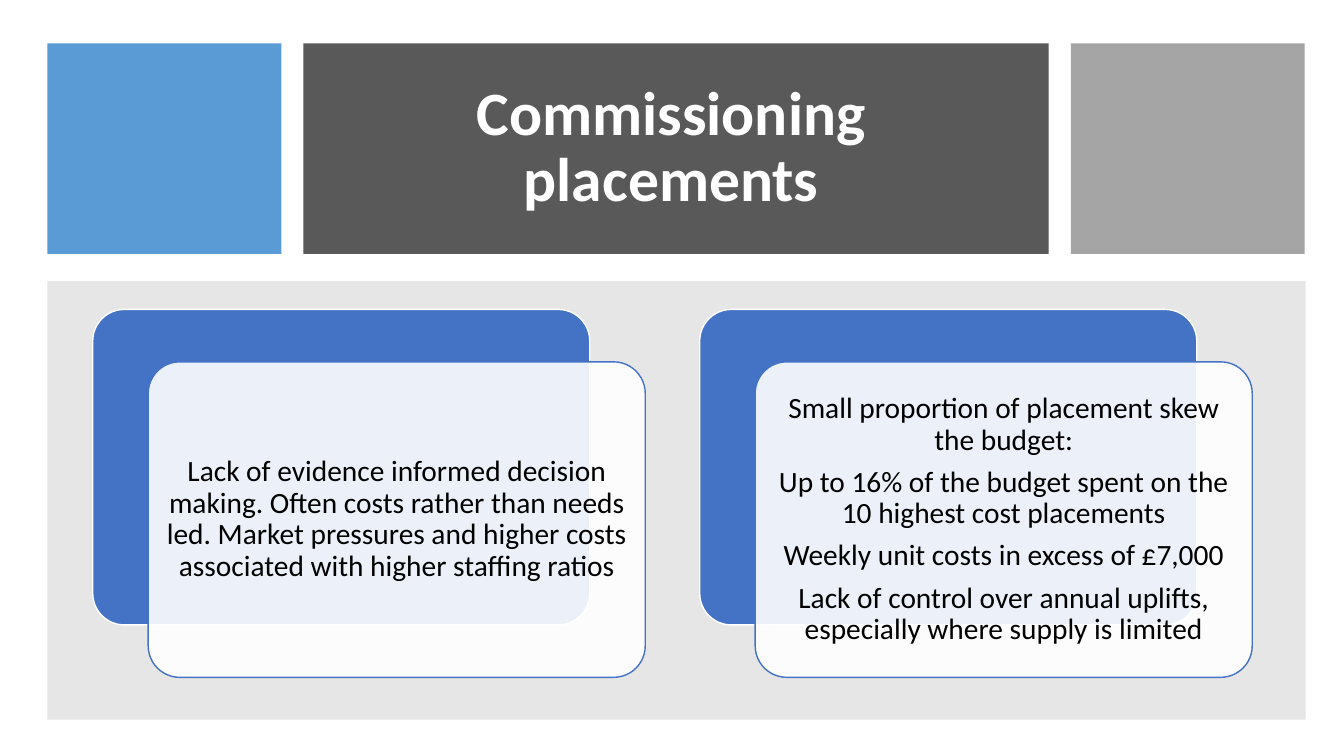
import pptx
import pptx.util
import pptx.dml.color
import pptx.enum.shapes
import pptx.enum.text
import pptx.oxml.ns
import lxml.etree

Inches = pptx.util.Inches
Pt = pptx.util.Pt
RGBColor = pptx.dml.color.RGBColor
MSO_SHAPE = pptx.enum.shapes.MSO_SHAPE

WHITE = RGBColor(0xFF, 0xFF, 0xFF)
BLACK = RGBColor(0x00, 0x00, 0x00)
CHARCOAL = RGBColor(0x59, 0x59, 0x59)
SKY = RGBColor(0x5B, 0x9B, 0xD5)
GREY = RGBColor(0xA5, 0xA5, 0xA5)
PALE_GREY = RGBColor(0xE7, 0xE6, 0xE6)
BLUE = RGBColor(0x44, 0x72, 0xC4)


def add_block(kind, left, top, width, height, fill, line=None):
    shape = slide.shapes.add_shape(
        kind, Inches(left), Inches(top), Inches(width), Inches(height))
    shape.shadow.inherit = False
    shape.fill.solid()
    shape.fill.fore_color.rgb = fill
    if line is None:
        shape.line.fill.background()
    else:
        shape.line.color.rgb = line
        shape.line.width = Pt(1)
        shape.adjustments[0] = 0.1
    return shape


def write_text(shape, lines, size, color, bold, space_after):
    frame = shape.text_frame
    frame.word_wrap = True
    frame.vertical_anchor = pptx.enum.text.MSO_ANCHOR.MIDDLE
    frame.text = "\n".join(lines)
    for paragraph in frame.paragraphs:
        paragraph.alignment = pptx.enum.text.PP_ALIGN.CENTER
        paragraph.line_spacing = 0.9
        paragraph.space_after = Pt(space_after)
        paragraph.font.name = "Calibri"
        paragraph.font.size = Pt(size)
        paragraph.font.bold = bold
        paragraph.font.color.rgb = color


presentation = pptx.Presentation()
presentation.slide_width = Inches(13.33)
presentation.slide_height = Inches(7.5)
slide = presentation.slides.add_slide(presentation.slide_layouts[6])

for left, width, fill in [(3.01, 7.39, CHARCOAL), (0.47, 2.32, SKY), (10.62, 2.32, GREY)]:
    add_block(MSO_SHAPE.RECTANGLE, left, 0.43, width, 2.09, fill)
add_block(MSO_SHAPE.RECTANGLE, 0.47, 2.79, 12.48, 4.35, PALE_GREY)

title = slide.shapes.add_textbox(Inches(3.53), Inches(0.75), Inches(6.26), Inches(1.45))
write_text(title, ["Commissioning placements"], 44, WHITE, True, 0)

cards = [
    ["Lack of evidence informed decision making. Often costs rather than needs led. "
     "Market pressures and higher costs associated with higher staffing ratios"],
    ["Small proportion of placement skew the budget:",
     "Up to 16% of the budget spent on the 10 highest cost placements",
     "Weekly unit costs in excess of £7,000",
     "Lack of control over annual uplifts, especially where supply is limited"],
]
for index, lines in enumerate(cards):
    left = 0.92 + index * 6.02
    add_block(MSO_SHAPE.ROUNDED_RECTANGLE, left, 3.07, 4.93, 3.13, BLUE, WHITE)
    card = add_block(MSO_SHAPE.ROUNDED_RECTANGLE, left + 0.55, 3.59, 4.93, 3.13, WHITE, BLUE)
    fill_color = card.element.spPr.find(pptx.oxml.ns.qn("a:solidFill"))[0]
    lxml.etree.SubElement(fill_color, pptx.oxml.ns.qn("a:alpha"), val="90000")
    frame = card.text_frame
    frame.margin_left = frame.margin_right = Inches(0.09)
    frame.margin_top = frame.margin_bottom = Inches(0.09)
    write_text(card, lines, 21, BLACK, False, 7.35)

presentation.save("out.pptx")
